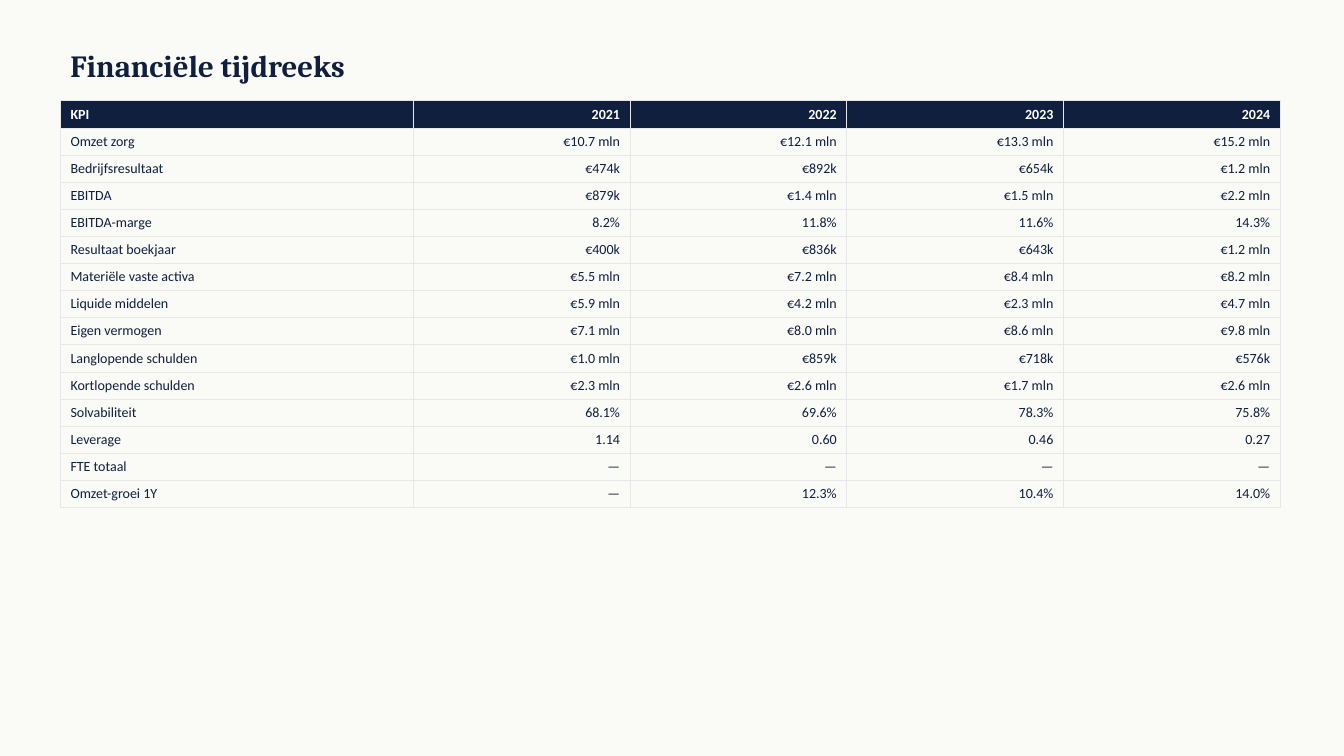
import pptx
import pptx.util
import pptx.dml.color
import pptx.enum.text
import pptx.oxml
import pptx.oxml.ns

TITLE = "Financiële tijdreeks"
ROWS = [
    ("KPI", "2021", "2022", "2023", "2024"),
    ("Omzet zorg", "€10.7 mln", "€12.1 mln", "€13.3 mln", "€15.2 mln"),
    ("Bedrijfsresultaat", "€474k", "€892k", "€654k", "€1.2 mln"),
    ("EBITDA", "€879k", "€1.4 mln", "€1.5 mln", "€2.2 mln"),
    ("EBITDA-marge", "8.2%", "11.8%", "11.6%", "14.3%"),
    ("Resultaat boekjaar", "€400k", "€836k", "€643k", "€1.2 mln"),
    ("Materiële vaste activa", "€5.5 mln", "€7.2 mln", "€8.4 mln", "€8.2 mln"),
    ("Liquide middelen", "€5.9 mln", "€4.2 mln", "€2.3 mln", "€4.7 mln"),
    ("Eigen vermogen", "€7.1 mln", "€8.0 mln", "€8.6 mln", "€9.8 mln"),
    ("Langlopende schulden", "€1.0 mln", "€859k", "€718k", "€576k"),
    ("Kortlopende schulden", "€2.3 mln", "€2.6 mln", "€1.7 mln", "€2.6 mln"),
    ("Solvabiliteit", "68.1%", "69.6%", "78.3%", "75.8%"),
    ("Leverage", "1.14", "0.60", "0.46", "0.27"),
    ("FTE totaal", "—", "—", "—", "—"),
    ("Omzet-groei 1Y", "—", "12.3%", "10.4%", "14.0%"),
]
COLORS = {"paper": "FAFAF7", "navy": "0F1F3D", "white": "FFFFFF", "rule": "E5E7EB"}
WIDTHS = [252] + [154.8] * 4
HEIGHT = 19.38

Pt = pptx.util.Pt
ALIGN = pptx.enum.text.PP_ALIGN
FORMATS = {
    "title": {"name": "Cambria", "size": Pt(22), "bold": True},
    "head": {"name": "Calibri", "size": Pt(10), "bold": True},
    "body": {"name": "Calibri", "size": Pt(10), "bold": False},
}


def tint(key):
    return pptx.dml.color.RGBColor.from_string(COLORS[key])


def write(frame, text, style, color, align=ALIGN.LEFT):
    para = frame.paragraphs[0]
    para.alignment = align
    run = para.add_run()
    run.text = text
    for key, value in FORMATS[style].items():
        setattr(run.font, key, value)
    run.font.color.rgb = tint(color)


def border(cell):
    props = cell._tc.get_or_add_tcPr()
    space = pptx.oxml.ns.nsdecls("a")
    for side in "LRTB":
        props.append(pptx.oxml.parse_xml(
            f'<a:ln{side} {space} w="{Pt(0.5)}"><a:solidFill>'
            f'<a:srgbClr val="{COLORS["rule"]}"/></a:solidFill></a:ln{side}>'))


def add_title(slide):
    box = slide.shapes.add_textbox(Pt(43.2), Pt(28.8), Pt(864), Pt(36))
    frame = box.text_frame
    frame.word_wrap = True
    frame.vertical_anchor = pptx.enum.text.MSO_ANCHOR.MIDDLE
    write(frame, TITLE, "title", "navy")


def add_grid(slide):
    table = slide.shapes.add_table(
        len(ROWS), len(WIDTHS), Pt(43.2), Pt(72),
        Pt(sum(WIDTHS)), Pt(HEIGHT * len(ROWS))).table
    table.horz_banding = False
    for col, width in zip(table.columns, WIDTHS):
        col.width = Pt(width)
    for r, row in enumerate(ROWS):
        table.rows[r].height = Pt(HEIGHT)
        for c, text in enumerate(row):
            cell = table.cell(r, c)
            border(cell)
            if r == 0:
                cell.fill.solid()
                cell.fill.fore_color.rgb = tint("navy")
            else:
                cell.fill.background()
            style, color = ("body", "navy") if r else ("head", "white")
            align = ALIGN.RIGHT if c else ALIGN.LEFT
            write(cell.text_frame, text, style, color, align)


def main():
    deck = pptx.Presentation()
    deck.slide_width, deck.slide_height = Pt(960), Pt(540)
    slide = deck.slides.add_slide(deck.slide_layouts[6])
    slide.background.fill.solid()
    slide.background.fill.fore_color.rgb = tint("paper")
    add_title(slide)
    add_grid(slide)
    deck.save("out.pptx")


if __name__ == "__main__":
    main()
